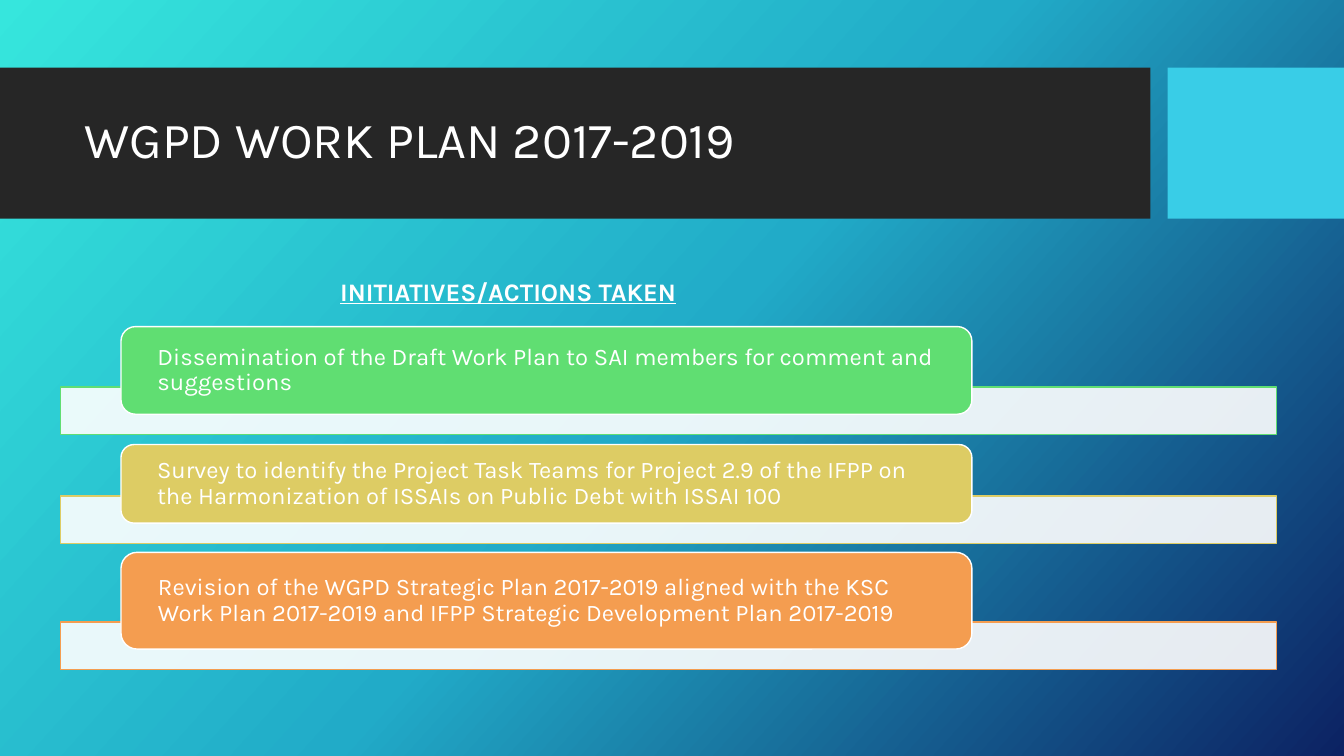
"""Build the work plan slide with its three initiatives."""
import pptx
import pptx.util
import pptx.dml.color
import pptx.enum.shapes
import pptx.enum.text
import pptx.oxml.ns
from lxml import etree

Inches = pptx.util.Inches
Pt = pptx.util.Pt
qn = pptx.oxml.ns.qn
SHAPE = pptx.enum.shapes.MSO_SHAPE
ALIGN = pptx.enum.text.PP_ALIGN
ANCHOR = pptx.enum.text.MSO_ANCHOR

FONT = "Karla"
COLORS = {
    "white": "FFFFFF", "banner": "262626", "accent": "39CDE7",
    "green": "60DE72", "yellow": "DDCC64", "orange": "F49D50",
}
BACKGROUND = [(0, "36E6DD"), (50, "21ABC8"), (100, "0C2263")]
INITIATIVES = [
    ("green", 3.24, 0.87, "Dissemination of the Draft Work Plan to SAI members "
     "for comment and suggestions"),
    ("yellow", 4.41, 0.78, "Survey to identify the Project Task Teams for Project 2.9 "
     "of the IFPP on the Harmonization of ISSAIs on Public Debt with ISSAI 100"),
    ("orange", 5.48, 0.96, "Revision of the WGPD Strategic Plan 2017-2019 aligned with the KSC "
     "Work Plan 2017-2019 and IFPP Strategic Development Plan 2017-2019"),
]
BAR_HEIGHT = 0.47
BAR_OVERLAP = 0.27


def rgb(name):
    """Return the named colour."""
    return pptx.dml.color.RGBColor.from_string(COLORS[name])


def set_background(s):
    """Fill the background with a diagonal three-stop gradient."""
    fill = s.background.fill
    fill.gradient()
    fill.gradient_angle = 318
    stops = s.element.find(".//" + qn("a:gsLst"))
    for stop in list(stops):
        stops.remove(stop)
    for percent, color in BACKGROUND:
        stop = etree.SubElement(stops, qn("a:gs"), pos=str(percent * 1000))
        etree.SubElement(stop, qn("a:srgbClr"), val=color)


def add_box(s, kind, box, fill, line=None, opacity=100):
    """Add a filled shape with an optional outline."""
    sp = s.shapes.add_shape(kind, *map(Inches, box))
    sp.shadow.inherit = False
    sp.fill.solid()
    sp.fill.fore_color.rgb = rgb(fill)
    if opacity < 100:
        color = sp.fill._xPr.find(".//" + qn("a:srgbClr"))
        etree.SubElement(color, qn("a:alpha"), val=str(opacity * 1000))
    if line:
        sp.line.color.rgb = rgb(line)
        sp.line.width = Pt(1)
    else:
        sp.line.fill.background()
    return sp


def write(sp, text, size, align=ALIGN.LEFT, spacing=0.9):
    """Write one white paragraph into a shape and return its run."""
    tf = sp.text_frame
    tf.word_wrap = True
    tf.vertical_anchor = ANCHOR.MIDDLE
    tf.text = text
    p = tf.paragraphs[0]
    p.alignment = align
    p.line_spacing = spacing
    r = p.runs[0]
    r.font.name = FONT
    r.font.size = Pt(size)
    r.font.color.rgb = rgb("white")
    return r


def add_text(s, box, text, size, **layout):
    """Add a text box and return its run."""
    return write(s.shapes.add_textbox(*map(Inches, box)), text, size, **layout)


def add_initiative(s, color, top, height, text):
    """Add a translucent bar with a rounded label over it."""
    bar_top = top + height - BAR_OVERLAP
    add_box(s, SHAPE.RECTANGLE, (0.6, bar_top, 12.06, BAR_HEIGHT), "white", color, 90)
    sp = add_box(s, SHAPE.ROUNDED_RECTANGLE, (1.2, top, 8.44, height), color, "white")
    tf = sp.text_frame
    tf.margin_left = tf.margin_right = Inches(0.32)
    tf.margin_top = tf.margin_bottom = 0
    write(sp, text, 17)


def main():
    """Build and save the slide."""
    prs = pptx.Presentation()
    prs.slide_width, prs.slide_height = Inches(13.33), Inches(7.5)
    s = prs.slides.add_slide(prs.slide_layouts[6])
    set_background(s)
    add_box(s, SHAPE.RECTANGLE, (0, 0.67, 11.41, 1.5), "banner")
    add_box(s, SHAPE.RECTANGLE, (11.58, 0.67, 1.75, 1.5), "accent")
    add_text(s, (0.74, 0.82, 10.51, 1.18), "WGPD WORK PLAN 2017-2019", 36)
    for initiative in INITIATIVES:
        add_initiative(s, *initiative)
    r = add_text(s, (1.74, 2.69, 6.6, 0.4), "INITIATIVES/ACTIONS TAKEN", 18,
                 align=ALIGN.CENTER, spacing=1.0)
    r.font.bold = True
    r.font.underline = True
    prs.save("out.pptx")


if __name__ == "__main__":
    main()
